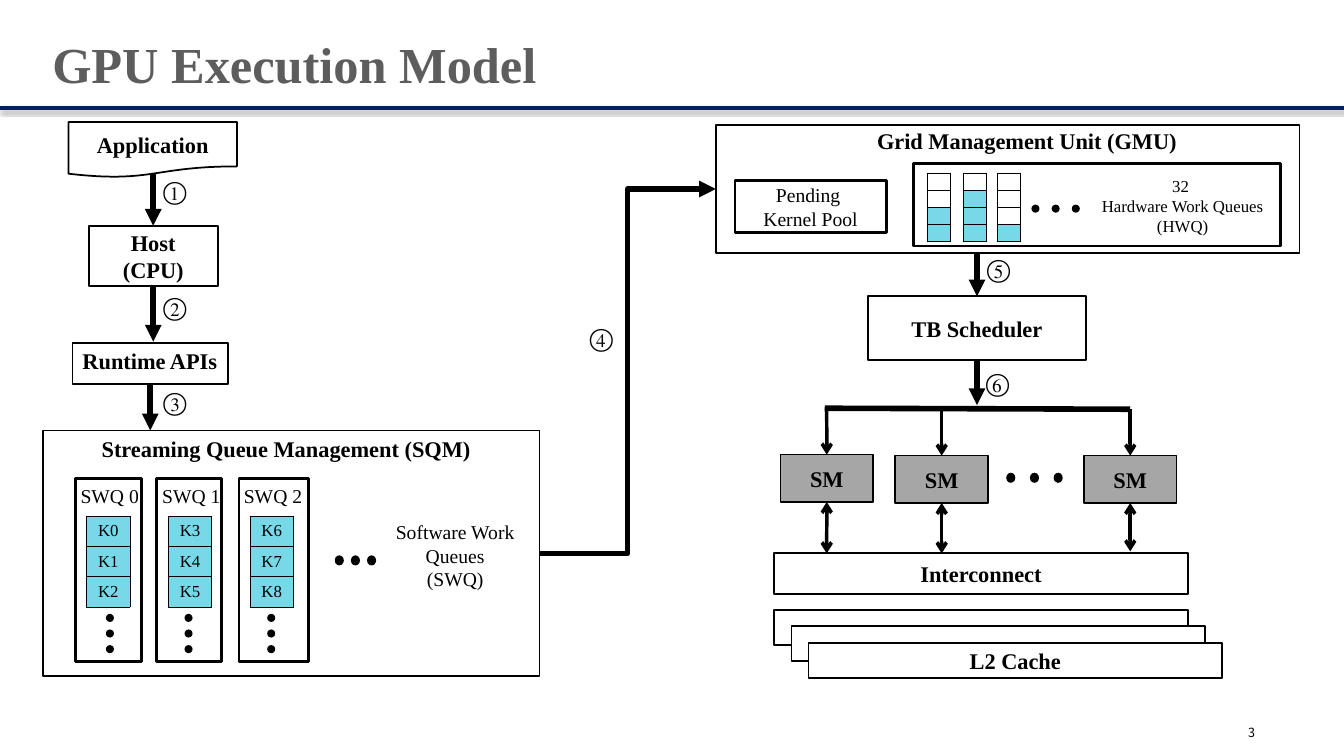
from lxml import etree
from pptx import Presentation
from pptx.dml.color import RGBColor
from pptx.enum.shapes import MSO_CONNECTOR, MSO_SHAPE
from pptx.enum.text import MSO_ANCHOR, PP_ALIGN
from pptx.oxml.ns import qn
from pptx.util import Inches, Pt

RECTANGLE, DOCUMENT, OVAL = MSO_SHAPE.RECTANGLE, MSO_SHAPE.FLOWCHART_DOCUMENT, MSO_SHAPE.OVAL
STRAIGHT, ELBOW = MSO_CONNECTOR.STRAIGHT, MSO_CONNECTOR.ELBOW
LEFT, CENTER = PP_ALIGN.LEFT, PP_ALIGN.CENTER
TOP, MIDDLE, BOTTOM = MSO_ANCHOR.TOP, MSO_ANCHOR.MIDDLE, MSO_ANCHOR.BOTTOM
SIDE_TOP, SIDE_LEFT, SIDE_BOTTOM, SIDE_RIGHT = range(4)
SERIF, SANS = "Times New Roman", "Noto Sans CJK SC"
COLORS = {
    name: RGBColor.from_string(value)
    for name, value in {
        "black": "000000", "white": "FFFFFF", "title": "5D5D5D",
        "navy": "002060", "queue": "77D9E8", "core": "A6A6A6",
    }.items()
}

presentation = Presentation()
presentation.slide_width, presentation.slide_height = Inches(13.33), Inches(7.5)
slide = presentation.slides.add_slide(presentation.slide_layouts[6])
shapes = slide.shapes


def write_text(frame, text, size, bold=False, align=CENTER, anchor=MIDDLE, color="black", font=SERIF):
    frame.word_wrap = True
    frame.vertical_anchor = anchor
    frame.text = text
    for paragraph in frame.paragraphs:
        paragraph.alignment = align
        for name, value in {"name": font, "size": Pt(size), "bold": bold}.items():
            setattr(paragraph.font, name, value)
            for run in paragraph.runs:
                setattr(run.font, name, value)
        for run in paragraph.runs:
            run.font.color.rgb = COLORS[color]


def draw_line(start, end, width, head=None, tail=None, source=None, target=None, kind=STRAIGHT, color="black"):
    """source and target are (shape, side) pairs to join the ends to."""
    line = shapes.add_connector(kind, *map(Inches, start + end))
    if source:
        line.begin_connect(*source)
    if target:
        line.end_connect(*target)
    line.line.width = Pt(width)
    line.line.color.rgb = COLORS[color]
    outline = line.line._get_or_add_ln()
    for tag, arrow in (("a:headEnd", head), ("a:tailEnd", tail)):
        if arrow:
            etree.SubElement(outline, qn(tag), type=arrow)
    return etree.SubElement(line._element.spPr, qn("a:effectLst"))


# Header
effects = draw_line((0, 1.07), (13.33, 1.07), 3, color="navy")
shadow = etree.SubElement(effects, qn("a:outerShdw"), blurRad="39370", dist="22860", dir="5400000", rotWithShape="0")
shadow_color = etree.SubElement(shadow, qn("a:srgbClr"), val="000000")
etree.SubElement(shadow_color, qn("a:alpha"), val="35000")

# Boxes: name, place, text, line width, fill, size, bold, preset
boxes = {}
for name, place, text, width, fill, size, bold, preset in [
    ("application", (0.68, 1.21, 1.67, 0.55), "Application", 1.25, "white", 16, True, DOCUMENT),
    ("host", (0.88, 2.24, 1.28, 0.6), "Host (CPU)", 1.25, "white", 16, True, RECTANGLE),
    ("runtime", (0.72, 3.4, 1.54, 0.41), "", 1.25, "white", 16, True, RECTANGLE),
    ("sqm", (0.43, 4.27, 4.92, 2.44), "", 1.25, "white", 16, True, RECTANGLE),
    ("swq 0", (0.75, 4.75, 0.65, 1.81), "", 2, "white", 14, False, RECTANGLE),
    ("swq 1", (1.55, 4.75, 0.65, 1.81), "", 2, "white", 14, False, RECTANGLE),
    ("swq 2", (2.37, 4.75, 0.69, 1.81), "", 2, "white", 14, False, RECTANGLE),
    ("gmu", (7.1, 1.24, 5.79, 1.27), "", 1.25, "white", 16, True, RECTANGLE),
    ("hwq", (9.06, 1.62, 3.64, 0.82), "", 2, "white", 12, False, RECTANGLE),
    ("pool", (7.29, 1.79, 1.5, 0.52), "Pending \nKernel Pool", 2, "white", 14, False, RECTANGLE),
    ("scheduler", (8.61, 2.94, 2.16, 0.63), "TB Scheduler", 1.25, "white", 16, True, RECTANGLE),
    ("sm 0", (7.74, 4.51, 0.92, 0.47), "SM", 1.25, "core", 16, True, RECTANGLE),
    ("sm 1", (8.88, 4.52, 0.92, 0.47), "SM", 1.25, "core", 16, True, RECTANGLE),
    ("sm 2", (10.75, 4.52, 0.92, 0.47), "SM", 1.25, "core", 16, True, RECTANGLE),
    ("interconnect", (7.68, 5.49, 4.1, 0.4), "Interconnect", 1.25, "white", 16, True, RECTANGLE),
    ("cache 0", (7.68, 6.05, 4.1, 0.35), "", 1.25, "white", 16, True, RECTANGLE),
    ("cache 1", (7.85, 6.21, 4.1, 0.35), "", 1.25, "white", 16, True, RECTANGLE),
    ("cache 2", (8.02, 6.38, 4.1, 0.35), "L2 Cache", 1.25, "white", 16, True, RECTANGLE),
]:
    box = boxes[name] = shapes.add_shape(preset, *map(Inches, place))
    box.shadow.inherit = False
    box.fill.solid()
    box.fill.fore_color.rgb = COLORS[fill]
    box.line.color.rgb = COLORS["black"]
    box.line.width = Pt(width)
    if text:
        write_text(box.text_frame, text, size, bold)

# Queues: left, top, width, row height, cells as (text, fill)
queues = [
    (0.86 + 0.81 * queue, 5.12, 0.43, 0.3, [(f"K{3 * queue + row}", "queue") for row in range(3)])
    for queue in range(3)
]
for left, used in ((9.2, 2), (9.55, 3), (9.89, 1)):
    queues.append((left, 1.72, 0.23, 0.17, [("", "white")] * (4 - used) + [("", "queue")] * used))

for left, top, width, row_height, cells in queues:
    size = map(Inches, (left, top, width, row_height * len(cells)))
    table = shapes.add_table(len(cells), 1, *size).table
    table.first_row = table.horz_banding = False
    for row, (text, fill) in enumerate(cells):
        table.rows[row].height = Inches(row_height)
        cell = table.cell(row, 0)
        for side in ("left", "top", "right", "bottom"):
            setattr(cell, f"margin_{side}", 0)
        cell.vertical_anchor = MIDDLE
        if text:
            write_text(cell.text_frame, text, 12)
        else:
            etree.SubElement(cell.text_frame.paragraphs[0]._p, qn("a:endParaRPr"), sz="600")
        properties = cell._tc.get_or_add_tcPr()
        for tag in ("a:lnL", "a:lnR", "a:lnT", "a:lnB"):
            border = etree.SubElement(properties, qn(tag), w=str(Pt(0.5)))
            border_fill = etree.SubElement(border, qn("a:solidFill"))
            etree.SubElement(border_fill, qn("a:srgbClr"), val=str(COLORS["black"]))
        cell.fill.solid()
        cell.fill.fore_color.rgb = COLORS[fill]

# Ellipses of three dots: first dot, step across, step down, dot size
for left, top, across, down, width, height in [
    (1.05, 6.09, 0, 0.155, 0.08, 0.08),
    (1.83, 6.09, 0, 0.155, 0.08, 0.08),
    (2.65, 6.09, 0, 0.155, 0.08, 0.08),
    (3.32, 5.51, 0.16, 0, 0.09, 0.1),
    (10.23, 2.03, 0.2, 0, 0.08, 0.08),
    (9.98, 4.69, 0.235, 0, 0.09, 0.1),
]:
    for index in range(3):
        place = (left + across * index, top + down * index, width, height)
        dot = shapes.add_shape(OVAL, *map(Inches, place))
        dot.shadow.inherit = False
        dot.fill.solid()
        dot.fill.fore_color.rgb = COLORS["black"]
        dot.line.fill.background()

# Labels: place, text, size, other format values
heading = {"bold": True, "align": LEFT, "anchor": TOP}
plain = {"align": LEFT, "anchor": TOP}
labels = [
    ((0.42, 0.38, 12.49, 0.6), "GPU Execution Model", 36, {**heading, "anchor": BOTTOM, "color": "title"}),
    ((0.72, 3.39, 1.6, 0.37), "Runtime APIs", 16, heading),
    ((0.91, 4.27, 4.14, 0.37), "Streaming Queue Management (SQM)", 16, heading),
    ((8.6, 1.21, 3.28, 0.37), "Grid Management Unit (GMU)", 16, heading),
    ((3.76, 5.11, 1.51, 0.81), "Software Work\nQueues\n(SWQ)", 14, {"anchor": TOP}),
    ((10.81, 1.69, 1.84, 0.71), "32 \nHardware Work Queues\n(HWQ)", 12, {"anchor": TOP}),
    ((12.28, 7.14, 0.63, 0.25), "3", 9, {**plain, "font": SANS}),
]
for queue in range(3):
    labels.append(((0.7 + 0.81 * queue, 4.75, 0.85, 0.34), f"SWQ {queue}", 14, plain))
steps = [(1.52, 1.69), (1.52, 2.84), (1.52, 3.78), (5.75, 3.15), (9.69, 2.46), (9.68, 3.59)]
for number, corner in zip("①②③④⑤⑥", steps):
    labels.append((corner + (0.45, 0.4), number, 18, plain))
for place, text, size, values in labels:
    write_text(shapes.add_textbox(*map(Inches, place)).text_frame, text, size, **values)

# Flow arrows
host, runtime, sqm, gmu, scheduler = (boxes[name] for name in ("host", "runtime", "sqm", "gmu", "scheduler"))
for start, end, source, target, kind in [
    ((1.52, 1.73), (1.52, 2.24), None, (host, SIDE_TOP), STRAIGHT),
    ((1.52, 2.84), (1.52, 3.39), (host, SIDE_BOTTOM), None, STRAIGHT),
    ((1.49, 3.81), (1.49, 4.27), (runtime, SIDE_BOTTOM), None, STRAIGHT),
    ((5.35, 5.49), (7.1, 1.87), (sqm, SIDE_RIGHT), (gmu, SIDE_LEFT), ELBOW),
    ((9.69, 2.5), (9.69, 2.94), None, (scheduler, SIDE_TOP), STRAIGHT),
    ((9.69, 3.57), (9.69, 4.02), (scheduler, SIDE_BOTTOM), None, STRAIGHT),
]:
    draw_line(start, end, 4, tail="triangle", source=source, target=target, kind=kind)

# Bus to the SMs and links to the interconnect
draw_line((8.18, 4.05), (11.21, 4.06), 4)
for index, (center, bottom) in enumerate(((8.2, 5.49), (9.34, 5.49), (11.21, 5.47))):
    core = boxes[f"sm {index}"]
    draw_line((center, 4.06), (center, 4.52), 2.5, tail="arrow", target=(core, SIDE_TOP))
    draw_line((center, 4.99), (center, bottom), 2.5, head="arrow", tail="arrow", source=(core, SIDE_BOTTOM))

presentation.save("out.pptx")
